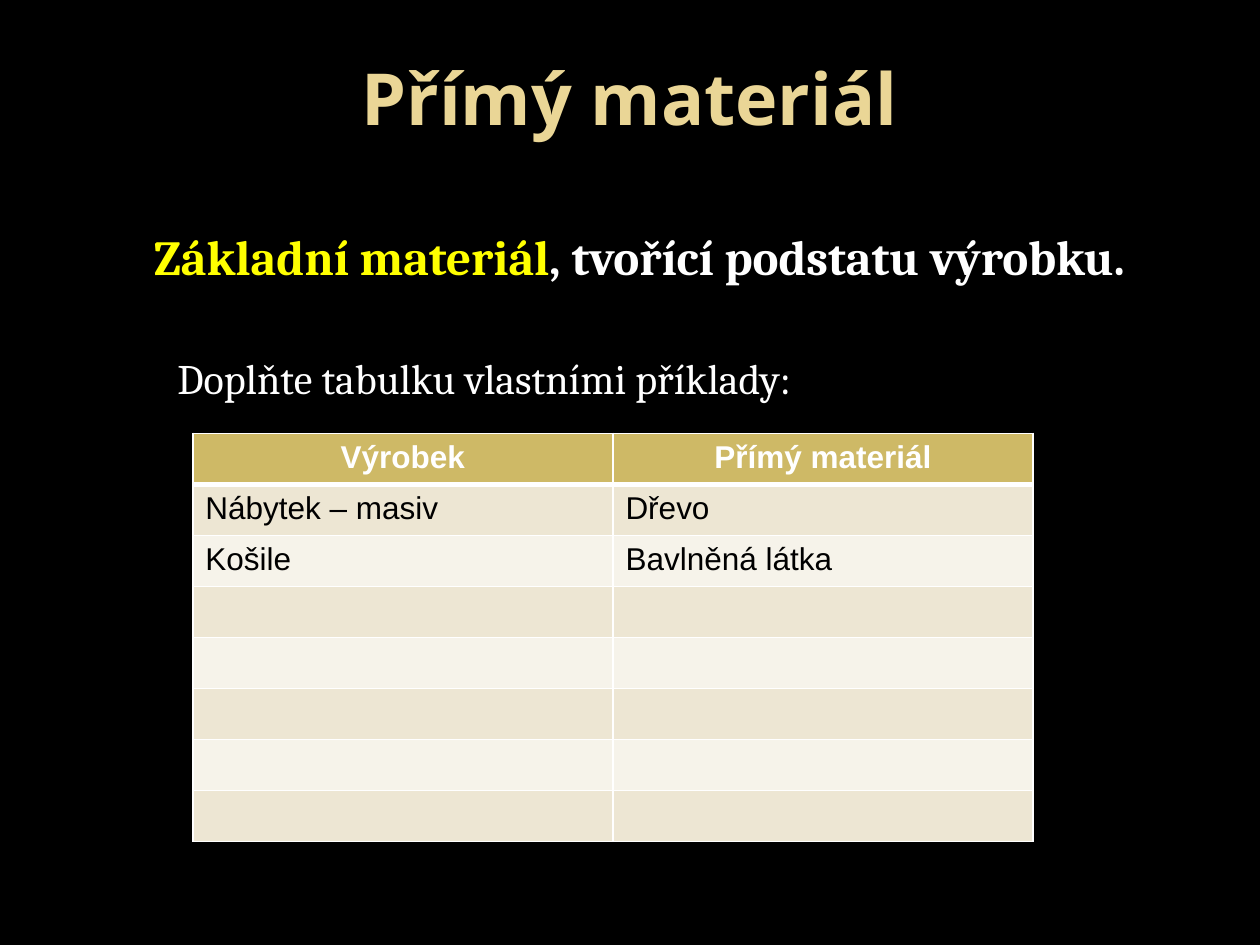
from lxml.etree import SubElement
from pptx import Presentation
from pptx.dml.color import RGBColor
from pptx.enum.text import MSO_ANCHOR, PP_ALIGN
from pptx.oxml.ns import qn
from pptx.util import Inches, Pt

COLORS = {
    "background": "000000", "title": "EAD696", "highlight": "FFFF00",
    "white": "FFFFFF", "black": "000000",
    "header": "CEB966", "odd": "EDE6D3", "even": "F6F3EA",
}
TITLE = "Přímý materiál"
DEFINITION = [("Základní materiál", "highlight"),
              (", tvořící podstatu výrobku.", "white")]
TASK = "Doplňte tabulku vlastními příklady:"
HEADER = ("Výrobek", "Přímý materiál")
EXAMPLES = [("Nábytek – masiv", "Dřevo"), ("Košile", "Bavlněná látka")]
EMPTY_ROWS = 5
TABLE_BOX = (1.53, 3.44, 6.67, 3.24)


def rgb(name):
    return RGBColor.from_string(COLORS[name])


def style(font, name, size, color, bold=False):
    font.name, font.size, font.bold = name, Pt(size), bold
    font.color.rgb = rgb(color)


def add_text_frame(slide, box, anchor):
    tf = slide.shapes.add_textbox(*map(Inches, box)).text_frame
    tf.word_wrap = True
    tf.vertical_anchor = anchor
    return tf


def indent(p, left, before):
    p._p.get_or_add_pPr().set("marL", str(Inches(left)))
    p.space_before = Pt(before)


def set_borders(cell, bottom):
    """Draw white cell borders; they must precede the fill in the XML."""
    tc_pr = cell._tc.get_or_add_tcPr()
    for side, width in (("L", 1), ("R", 1), ("T", 1), ("B", bottom)):
        ln = SubElement(tc_pr, qn(f"a:ln{side}"), w=str(Pt(width)))
        fill = SubElement(ln, qn("a:solidFill"))
        SubElement(fill, qn("a:srgbClr"), val=COLORS["white"])


def add_title(slide):
    tf = add_text_frame(slide, (0.5, 0.3, 9, 0.93), MSO_ANCHOR.MIDDLE)
    p = tf.paragraphs[0]
    p.text = TITLE
    p.alignment = PP_ALIGN.CENTER
    style(p.runs[0].font, "Open Sans", 41, "title", bold=True)


def add_body(slide):
    tf = add_text_frame(slide, (0.5, 1.75, 9, 1.6), MSO_ANCHOR.TOP)
    p = tf.paragraphs[0]
    p.alignment = PP_ALIGN.CENTER
    indent(p, 0.15, 5.6)
    for text, color in DEFINITION:
        r = p.add_run()
        r.text = text
        style(r.font, "Cambria", 28, color, bold=True)
    p = tf.add_paragraph()
    p.text = TASK
    indent(p, 0.81, 38)
    style(p.runs[0].font, "Cambria", 24, "white")


def add_examples_table(slide):
    rows = [HEADER, *EXAMPLES, *[("", "")] * EMPTY_ROWS]
    table = slide.shapes.add_table(
        len(rows), len(HEADER), *map(Inches, TABLE_BOX)).table
    for i, row in enumerate(rows):
        is_header = i == 0
        fill = "header" if is_header else "odd" if i % 2 else "even"
        for j, text in enumerate(row):
            cell = table.cell(i, j)
            set_borders(cell, 3 if is_header else 1)
            cell.fill.solid()
            cell.fill.fore_color.rgb = rgb(fill)
            p = cell.text_frame.paragraphs[0]
            p.text = text
            p.alignment = PP_ALIGN.CENTER if is_header else PP_ALIGN.LEFT
            for r in p.runs:
                style(r.font, "Arial", 18, "white" if is_header else "black",
                      bold=is_header)


def main():
    prs = Presentation()
    prs.slide_width, prs.slide_height = Inches(10), Inches(7.5)
    s = prs.slides.add_slide(prs.slide_layouts[6])
    s.background.fill.solid()
    s.background.fill.fore_color.rgb = rgb("background")
    add_title(s)
    add_body(s)
    add_examples_table(s)
    prs.save("out.pptx")


if __name__ == "__main__":
    main()
